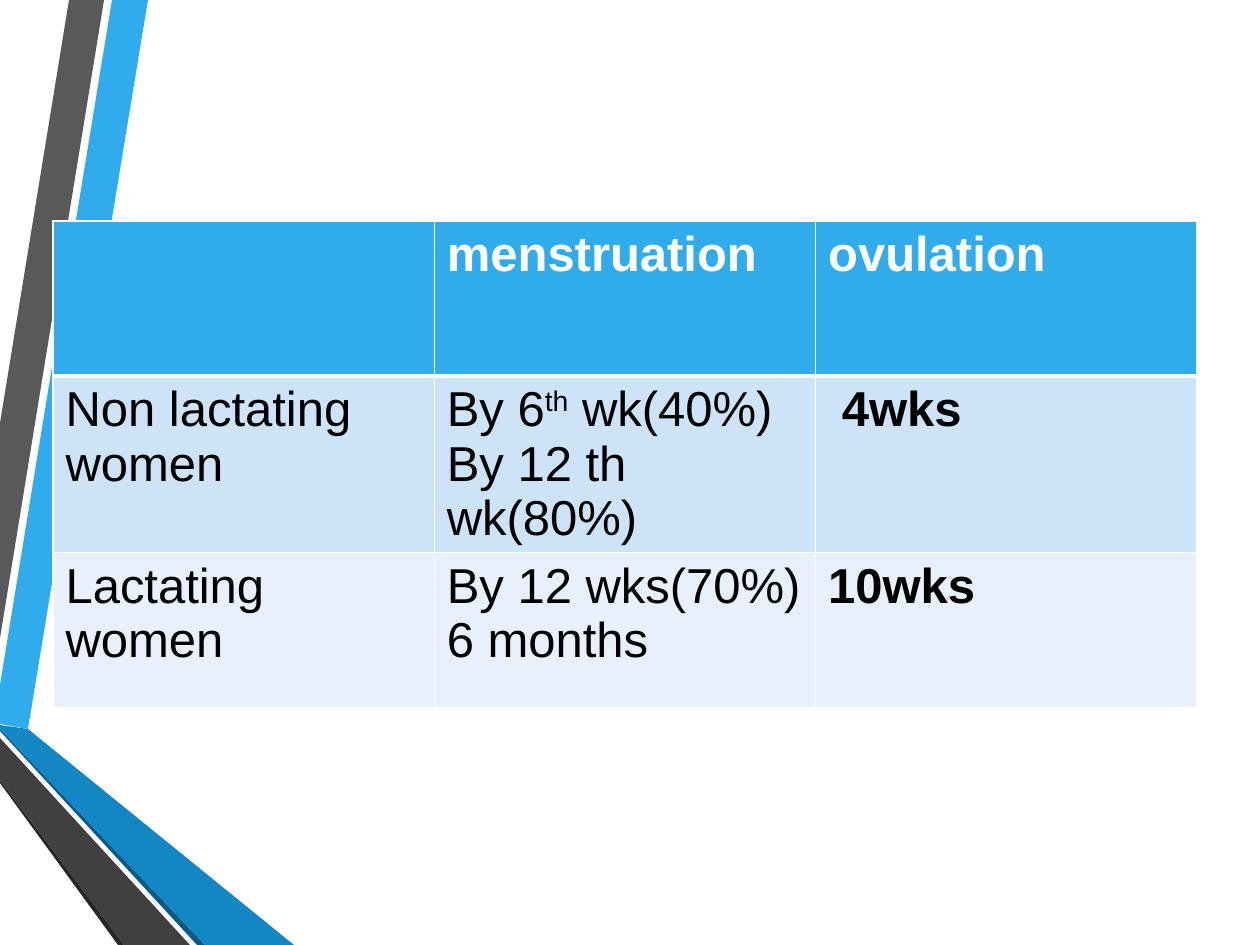
import pptx
import pptx.dml.color
import pptx.oxml.ns
import pptx.util
from lxml import etree

PX_PER_INCH = 126
WHITE, BLACK = "FFFFFF", "000000"
ROW_FILLS = ["30ACEC", "CDE3F8", "E8F1FB"]

RIBBONS = [
    ("30ACEC", [(0, 685), (0, 724), (28, 729), (148, 0), (112, 0)]),
    ("595959", [(104, 0), (69, 0), (0, 423), (0, 638)]),
    ("262626", [(0, 780), (0, 783), (118, 945), (124, 945)]),
    ("0C5A82", [(0, 729), (0, 731), (197, 945), (205, 945)]),
    ("1287C3", [(0, 729), (205, 945), (294, 945), (28, 729), (0, 725)]),
    ("404040", [(0, 780), (124, 945), (190, 945), (0, 738)]),
]

# Each cell is a list of paragraphs; each paragraph is a list of runs.
SUPERSCRIPT = "th"
RETURN_TIMES = [
    [[], [["menstruation"]], [["ovulation"]]],
    [[["Non lactating women"]],
     [["By 6", SUPERSCRIPT, " wk(40%)"], ["By 12 th wk(80%)"]],
     [[" 4wks"]]],
    [[["Lactating women"]],
     [["By 12 wks(70%)"], ["6 months"]],
     [["10wks"]]],
]


def px(length):
    return pptx.util.Inches(length / PX_PER_INCH)


def paint(fill, color):
    fill.solid()
    fill.fore_color.rgb = pptx.dml.color.RGBColor.from_string(color)


def add_ribbons(slide, left, top):
    for color, points in RIBBONS:
        corners = [(px(left + x), px(top + y)) for x, y in points]
        outline = slide.shapes.build_freeform(*corners[0])
        outline.add_line_segments(corners[1:], close=True)
        ribbon = outline.convert_to_shape()
        ribbon.shadow.inherit = False
        paint(ribbon.fill, color)
        ribbon.line.fill.background()


def set_border(cell, side, points):
    qn = pptx.oxml.ns.qn
    line = etree.SubElement(cell._tc.get_or_add_tcPr(), qn(f"a:ln{side}"),
                            w=str(pptx.util.Pt(points)))
    fill = etree.SubElement(line, qn("a:solidFill"))
    etree.SubElement(fill, qn("a:srgbClr"), val=WHITE)


def write_cell(cell, paragraphs, color, bold):
    frame = cell.text_frame
    for index, runs in enumerate(paragraphs):
        paragraph = frame.add_paragraph() if index else frame.paragraphs[0]
        paragraph.font.name = "Arial"
        paragraph.font.size = pptx.util.Pt(28)
        paragraph.font.bold = bold
        paint(paragraph.font.fill, color)
        for text in runs:
            run = paragraph.add_run()
            run.text = text
            if text == SUPERSCRIPT:
                run._r.get_or_add_rPr().set("baseline", "30000")


def add_return_table(slide, left, top, width, height):
    rows, columns = len(RETURN_TIMES), len(RETURN_TIMES[0])
    table = slide.shapes.add_table(rows, columns, px(left), px(top),
                                   px(width), px(height)).table
    for r, contents in enumerate(RETURN_TIMES):
        header = r == 0
        for c, paragraphs in enumerate(contents):
            cell = table.cell(r, c)
            for side in "LRTB":
                header_rule = (r, side) in [(0, "B"), (1, "T")]
                set_border(cell, side, 3 if header_rule else 1)
            paint(cell.fill, ROW_FILLS[r])
            write_cell(cell, paragraphs, WHITE if header else BLACK,
                       bold=header or c == columns - 1)


def main():
    deck = pptx.Presentation()
    deck.slide_width, deck.slide_height = px(1260), px(945)
    slide = deck.slides.add_slide(deck.slide_layouts[6])
    paint(slide.background.fill, WHITE)
    add_ribbons(slide, 0, 0)
    add_return_table(slide, 53, 221, 1144, 465)
    deck.save("out.pptx")


if __name__ == "__main__":
    main()
